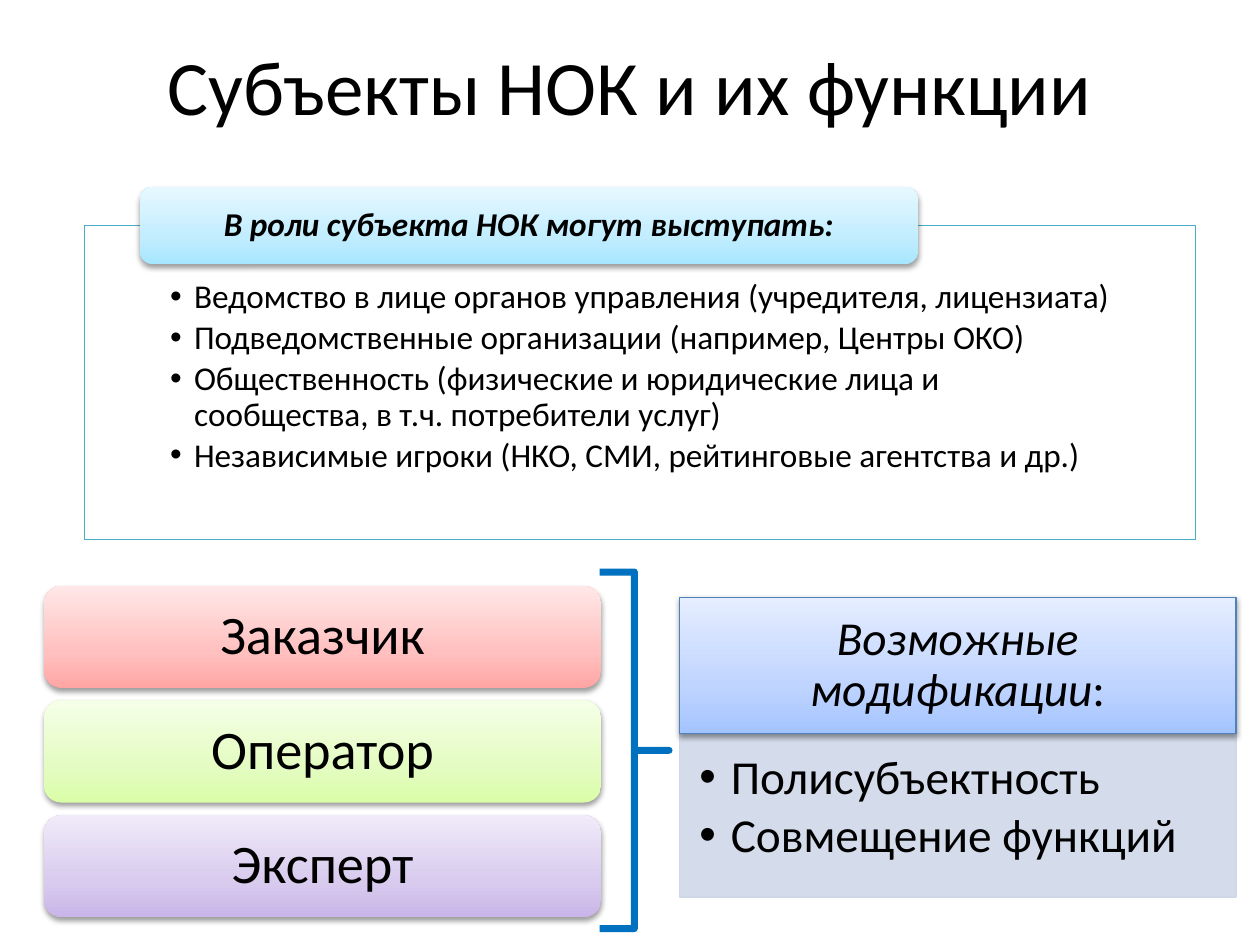
import copy

import pptx
import pptx.dml.color
import pptx.enum.shapes
import pptx.enum.text
import pptx.oxml
import pptx.oxml.ns
import pptx.util

RGB = pptx.dml.color.RGBColor
SHAPE = pptx.enum.shapes.MSO_SHAPE
ALIGN = pptx.enum.text.PP_ALIGN
ANCHOR = pptx.enum.text.MSO_ANCHOR
Pt = pptx.util.Pt
qn = pptx.oxml.ns.qn

FONT = "Calibri"
BLACK = RGB(0x00, 0x00, 0x00)
WHITE = RGB(0xFF, 0xFF, 0xFF)
TEAL = RGB(0x4B, 0xAC, 0xC6)
BLUE = RGB(0x4F, 0x81, 0xBD)
BRACE_BLUE = RGB(0x00, 0x70, 0xC0)
PALE_BLUE = RGB(0xD0, 0xD8, 0xE8)
RED_STOPS = RGB(0xFF, 0xA6, 0xA5), RGB(0xFF, 0xC0, 0xBF), RGB(0xFF, 0xE7, 0xE7)
GREEN_STOPS = RGB(0xDA, 0xFD, 0xA7), RGB(0xE4, 0xFC, 0xC2), RGB(0xF5, 0xFF, 0xE7)
VIOLET_STOPS = RGB(0xC9, 0xB5, 0xE8), RGB(0xD8, 0xCB, 0xEE), RGB(0xF0, 0xEA, 0xF9)
BLUE_STOPS = RGB(0xA4, 0xC4, 0xFF), RGB(0xBF, 0xD4, 0xFF), RGB(0xE6, 0xEE, 0xFF)
CYAN_STOPS = RGB(0xA7, 0xE6, 0xFF), RGB(0xC1, 0xED, 0xFF), RGB(0xE7, 0xF8, 0xFF)

UNIT = pptx.util.Inches(0.05)
COLS, ROWS = 200, 150


def cells(*counts):
    """Convert counts of grid cells to lengths."""
    return [round(n * UNIT) for n in counts]


def place(sp, box):
    """Move a placeholder to a box given in grid cells."""
    sp.left, sp.top, sp.width, sp.height = cells(*box)


def style_text(sp, size, insets, anchor=ANCHOR.MIDDLE, align=ALIGN.CENTER, after=0.35):
    """Format the frame, paragraphs and runs of a shape."""
    tf = sp.text_frame
    tf.word_wrap = True
    tf.auto_size = pptx.enum.text.MSO_AUTO_SIZE.NONE
    tf.vertical_anchor = anchor
    tf.margin_left, tf.margin_top, tf.margin_right, tf.margin_bottom = cells(*insets)
    for p in tf.paragraphs:
        p.alignment = align
        p.line_spacing = 0.9
        p.space_before = Pt(0)
        p.space_after = Pt(round(size * after, 1))
        for r in p.runs:
            r.font.name = FONT
            r.font.size = Pt(size)
            r.font.color.rgb = BLACK


def add_panel(slide, kind, box, stops):
    """Add a shaded panel with a vertical gradient and a soft shadow."""
    sp = slide.shapes.add_shape(kind, *cells(*box))
    if kind == SHAPE.ROUNDED_RECTANGLE:
        sp.adjustments[0] = 0.17
    sp.line.fill.background()
    sp.fill.gradient()
    sp.fill.gradient_angle = 90
    props = sp._element.spPr
    stop_list = props.find(".//" + qn("a:gsLst"))
    stop_list.append(copy.deepcopy(stop_list[0]))
    for stop, position, color in zip(sp.fill.gradient_stops, (0, 0.35, 1), stops):
        stop.position = position
        stop.color.rgb = color
    sp.shadow.inherit = False
    props.find(qn("a:effectLst")).append(pptx.oxml.parse_xml(
        f'<a:outerShdw {pptx.oxml.ns.nsdecls("a")} blurRad="{Pt(3.1)}" dist="{Pt(1.6)}" '
        'dir="5400000" rotWithShape="0"><a:srgbClr val="000000"><a:alpha val="38000"/>'
        '</a:srgbClr></a:outerShdw>'))
    return sp


def fill_list(sp, box, items, size, indent, insets, fill, line):
    """Place a body placeholder as a filled box with a bulleted list."""
    place(sp, box)
    sp.fill.solid()
    sp.fill.fore_color.rgb = fill
    color = sp._element.spPr.find(".//" + qn("a:srgbClr"))
    color.append(pptx.oxml.parse_xml(
        f'<a:alpha {pptx.oxml.ns.nsdecls("a")} val="90000"/>'))
    sp.line.color.rgb = line
    sp.line.width = Pt(0.75)
    sp.text_frame.text = "\n".join(items)
    style_text(sp, size, insets, ANCHOR.TOP, ALIGN.LEFT, 0.15)
    step = cells(indent)[0]
    for p in sp.text_frame.paragraphs:
        props = p._p.get_or_add_pPr()
        props.set("marL", str(step))
        props.set("indent", str(-step))
        props.append(pptx.oxml.parse_xml(
            f'<a:buChar {pptx.oxml.ns.nsdecls("a")} char="•"/>'))


def build_title(slide, box):
    """Place the slide title."""
    s = slide.shapes.title
    place(s, box)
    s.text_frame.text = "Субъекты НОК и их функции"
    style_text(s, 44, (2, 1, 2, 1), after=0)
    s.text_frame.paragraphs[0].line_spacing = 1


def build_subjects(slide, body, box):
    """Build the outlined list with its overlapping heading."""
    x, y, w, h = box
    items = (
        "Ведомство в лице органов управления (учредителя, лицензиата)",
        "Подведомственные организации (например, Центры ОКО)",
        "Общественность (физические и юридические лица и сообщества, в т.ч. потребители услуг)",
        "Независимые игроки (НКО, СМИ, рейтинговые агентства и др.)",
    )
    fill_list(body, box, items, 19, 3.8, (13.6, 8.6, 13.6, 3), WHITE, TEAL)
    head = 12.3
    sp = add_panel(slide, SHAPE.ROUNDED_RECTANGLE,
                   (x + w * 0.05, y - head / 2, w * 0.7, head), CYAN_STOPS)
    sp.text_frame.text = "В роли субъекта НОК могут выступать:"
    style_text(sp, 19, (5.2, 0, 5.2, 0))
    font = sp.text_frame.paragraphs[0].runs[0].font
    font.bold = font.italic = True


def build_roles(slide, box):
    """Stack the three role panels evenly in the box."""
    x, y, w, h = box
    roles = (("Заказчик", RED_STOPS), ("Оператор", GREEN_STOPS), ("Эксперт", VIOLET_STOPS))
    gap = 2
    height = (h - gap * (len(roles) - 1)) / len(roles)
    for i, (name, stops) in enumerate(roles):
        sp = add_panel(slide, SHAPE.ROUNDED_RECTANGLE,
                       (x, y + i * (height + gap), w, height), stops)
        sp.text_frame.text = name
        style_text(sp, 31, (3.4, 3.4, 3.4, 3.4))


def build_brace(slide, box):
    """Draw the square brace that gathers the roles."""
    s = slide.shapes.add_shape(SHAPE.RIGHT_BRACE, *cells(*box))
    s.adjustments[0] = 0
    s.adjustments[1] = 0.5
    s.fill.background()
    s.line.color.rgb = BRACE_BLUE
    s.line.width = Pt(4)
    s.shadow.inherit = False


def build_variants(slide, body, box):
    """Build the heading panel and the list of variants below it."""
    x, y, w, h = box
    head = 21.6
    fill_list(body, (x, y + head, w, h - head), ("Полисубъектность", "Совмещение функций"),
              27, 5, (3.2, 3.2, 4.2, 4.8), PALE_BLUE, PALE_BLUE)
    sp = add_panel(slide, SHAPE.RECTANGLE, (x, y, w, head), BLUE_STOPS)
    sp.line.color.rgb = BLUE
    sp.line.width = Pt(0.75)
    p = sp.text_frame.paragraphs[0]
    p.text = "Возможные модификации"
    p.runs[0].font.italic = True
    p.add_run().text = ":"
    style_text(sp, 27, (4.2, 2.4, 4.2, 2.4))


def main():
    """Build the slide and save it."""
    prs = pptx.Presentation()
    prs.slide_width, prs.slide_height = cells(COLS, ROWS)
    slide = prs.slides.add_slide(prs.slide_layouts[3])
    subjects, variants = slide.placeholders[1], slide.placeholders[2]
    build_title(slide, (10, 1, 180, 25))
    build_roles(slide, (7, 93, 88.4, 52.6))
    build_variants(slide, variants, (107.8, 94.8, 88.4, 47.6))
    build_brace(slide, (95.2, 90.8, 11, 56.6))
    build_subjects(slide, subjects, (13.4, 35.8, 176.4, 49.8))
    prs.save("out.pptx")


if __name__ == "__main__":
    main()
